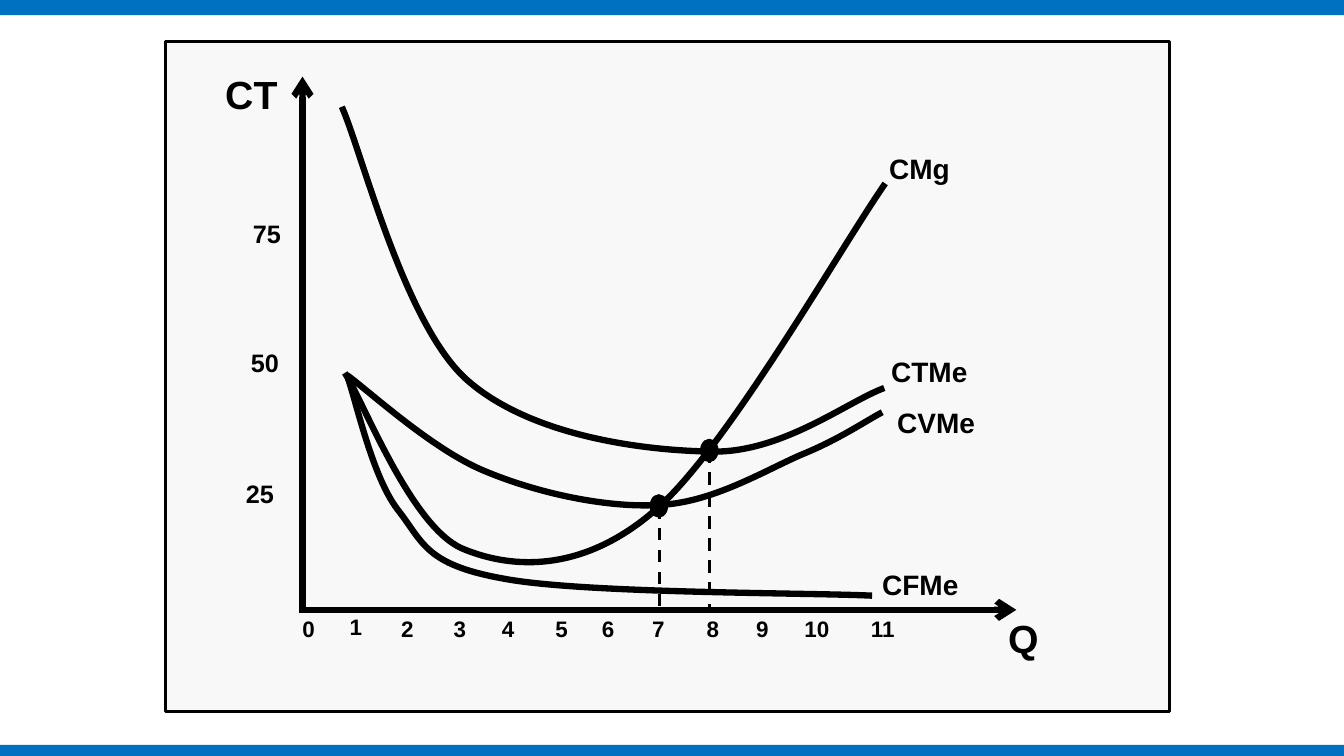
from lxml import etree
from pptx import Presentation
from pptx import util as u
from pptx.dml import color
from pptx.enum import dml, shapes, text
from pptx.oxml import ns

PX = 9144  # 100 px to the inch
BLACK = "000000"


def paint(fill, hex_color):
    fill.solid()
    fill.fore_color.rgb = color.RGBColor.from_string(hex_color)


def add_line(x1, y1, x2, y2, width):
    line = slide.shapes.add_connector(
        shapes.MSO_CONNECTOR.STRAIGHT, x1 * PX, y1 * PX, x2 * PX, y2 * PX)
    paint(line.line.fill, BLACK)
    line.line.width = u.Pt(width)
    etree.SubElement(line._element.spPr, ns.qn("a:effectLst"))
    return line


presentation = Presentation()
presentation.slide_width = u.Inches(13.33)
presentation.slide_height = u.Inches(7.5)
slide = presentation.slides.add_slide(presentation.slide_layouts[6])

# Blue bands and the chart frame
for left, top, width, height, fill, border in [
    (0, 0, 1333, 15, "0070C0", None),
    (0, 739, 1333, 11, "0070C0", None),
    (164, 41, 996, 665, "F8F8F8", 2.25),
]:
    panel = slide.shapes.add_shape(
        shapes.MSO_SHAPE.RECTANGLE, left * PX, top * PX, width * PX, height * PX)
    panel.shadow.inherit = False
    paint(panel.fill, fill)
    if border:
        paint(panel.line.fill, BLACK)
        panel.line.width = u.Pt(border)
    else:
        panel.line.fill.background()

# Axes
for ends in [(300, 605, 300, 76), (297, 605, 1008, 605)]:
    axis = add_line(*ends, 4.5)
    etree.SubElement(axis.line._get_or_add_ln(), ns.qn("a:tailEnd"), type="arrow")

# CMg, CVMe, CTMe, CFMe: a start point, then two control points and an end per Bézier piece
cost_curves = [
    [(342, 370), (361, 399), (407, 521), (458, 544), (510, 566), (580, 567),
     (650, 506), (720, 446), (831, 250), (878, 182)],
    [(344, 372), (366, 388), (429, 446), (480, 467), (532, 489), (601, 504),
     (653, 501), (706, 499), (758, 467), (795, 451), (832, 436), (858, 418), (875, 409)],
    [(339, 106), (359, 151), (400, 318), (461, 375), (523, 432), (636, 447),
     (705, 448), (775, 450), (841, 398), (877, 385)],
    [(345, 375), (353, 397), (369, 472), (394, 505), (420, 538), (421, 560),
     (499, 574), (577, 589), (804, 588), (865, 591)],
]
for knots in cost_curves:
    builder = slide.shapes.build_freeform(*knots[0], scale=PX)
    builder.add_line_segments(knots[1:], close=False)
    curve = builder.convert_to_shape()
    # Turn every three straight segments into one cubic Bézier piece
    segments = list(curve._element.iter(ns.qn("a:lnTo")))
    for first in range(0, len(segments), 3):
        bezier = etree.Element(ns.qn("a:cubicBezTo"))
        segments[first].addprevious(bezier)
        for segment in segments[first:first + 3]:
            bezier.append(segment[0])
            segment.getparent().remove(segment)
    curve.shadow.inherit = False
    curve.fill.background()
    paint(curve.line.fill, BLACK)
    curve.line.width = u.Pt(4.5)

# Minimum points with their drop lines
for x, y in [(654, 502), (704, 447)]:
    drop = add_line(x, y, x, 604, 2.25)
    drop.line.dash_style = dml.MSO_LINE.DASH
    dot = slide.shapes.add_shape(
        shapes.MSO_SHAPE.OVAL, (x - 9) * PX, (y - 11) * PX, 17 * PX, 22 * PX)
    dot.shadow.inherit = False
    paint(dot.fill, BLACK)
    paint(dot.line.fill, BLACK)
    dot.line.width = u.Pt(1)

# Labels: text, left, top, width, height, size
labels = [
    ("Q", 990, 605, 50, 57, 28), ("CT", 213, 65, 72, 57, 28),
    ("25", 234, 470, 52, 45, 18), ("50", 239, 340, 52, 45, 18),
    ("75", 241, 212, 52, 45, 18),
    ("CMg", 872, 145, 88, 49, 20), ("CTMe", 874, 347, 106, 49, 20),
    ("CVMe", 880, 397, 107, 49, 20), ("CFMe", 865, 558, 106, 49, 20),
]
tick_lefts = [290, 337, 388, 440, 488, 541, 587, 637, 691, 740, 788, 854]
for quantity, left in enumerate(tick_lefts):
    labels.append((str(quantity), left, 603 if quantity == 1 else 605,
                   35 if quantity < 10 else 49, 41, 16))

for caption, left, top, width, height, size in labels:
    box = slide.shapes.add_textbox(left * PX, top * PX, width * PX, height * PX)
    frame = box.text_frame
    frame.text = caption
    frame.word_wrap = False
    frame.auto_size = text.MSO_AUTO_SIZE.SHAPE_TO_FIT_TEXT
    paragraph = frame.paragraphs[0]
    if caption == "CT":
        paragraph.alignment = text.PP_ALIGN.RIGHT
    font = paragraph.runs[0].font
    font.name = "Arial"
    font.size = u.Pt(size)
    font.bold = True
    paint(font.fill, BLACK)

presentation.save("out.pptx")
